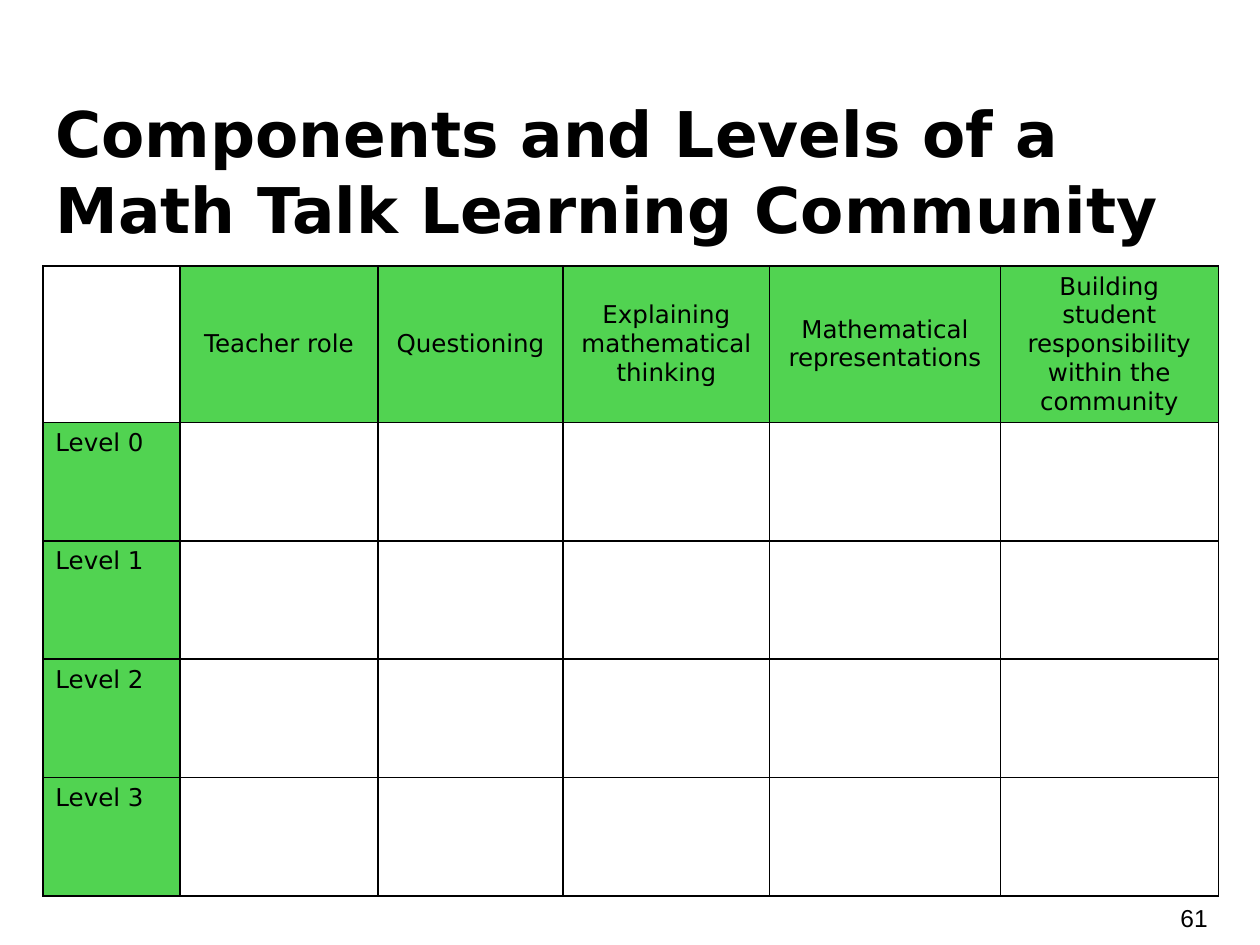
from dataclasses import dataclass

from lxml.etree import SubElement
from pptx import Presentation
from pptx.dml.color import RGBColor
from pptx.enum.text import MSO_ANCHOR, MSO_AUTO_SIZE, PP_ALIGN
from pptx.oxml.ns import qn
from pptx.util import Inches, Pt

GREEN = RGBColor(0x51, 0xD3, 0x51)
BLACK = RGBColor(0, 0, 0)
TITLE_FONT = "DejaVu Sans"
NUMBER_FONT = "Arial"
MARGIN = 0.1
LEFT, WIDTH = 0.34, 9.32
TABLE_TOP = 2.11
HEADER_HEIGHT, LEVEL_HEIGHT = 1.24, 0.94
LEVEL_COLUMN_WIDTH = 1.09
LEVELS = [f"Level {number}" for number in range(4)]


@dataclass
class Component:
    name: str
    width: float


COMPONENTS = [
    Component("Teacher role", 1.57),
    Component("Questioning", 1.47),
    Component("Explaining mathematical thinking", 1.64),
    Component("Mathematical representations", 1.83),
    Component("Building student responsibility within the community", 1.73),
]


def place(shape, left: float, top: float, width: float, height: float) -> None:
    shape.left, shape.top = Inches(left), Inches(top)
    shape.width, shape.height = Inches(width), Inches(height)


def write(frame, text: str, size: int, font: str, align=PP_ALIGN.LEFT, bold=False) -> None:
    frame.text = text
    paragraph = frame.paragraphs[0]
    paragraph.alignment = align
    paragraph.font.size = Pt(size)
    paragraph.font.name = font
    paragraph.font.bold = bold
    paragraph.font.color.rgb = BLACK


def set_frame(frame, anchor) -> None:
    frame.word_wrap = True
    frame.auto_size = MSO_AUTO_SIZE.NONE
    frame.vertical_anchor = anchor
    frame.margin_left = frame.margin_right = Inches(MARGIN)
    frame.margin_top = frame.margin_bottom = Inches(MARGIN)


def add_borders(cell) -> None:
    properties = cell._tc.get_or_add_tcPr()
    for side in ("a:lnL", "a:lnR", "a:lnT", "a:lnB"):
        line = SubElement(properties, qn(side), w=str(Pt(1)))
        fill = SubElement(line, qn("a:solidFill"))
        SubElement(fill, qn("a:srgbClr"), val=str(BLACK))


def fill_label(cell, text: str, align, anchor) -> None:
    write(cell.text_frame, text, 14, TITLE_FONT, align)
    cell.vertical_anchor = anchor
    cell.fill.solid()
    cell.fill.fore_color.rgb = GREEN


def add_level_table(page) -> None:
    widths = [LEVEL_COLUMN_WIDTH] + [component.width for component in COMPONENTS]
    heights = [HEADER_HEIGHT] + [LEVEL_HEIGHT] * len(LEVELS)
    table = page.shapes.add_table(
        len(heights), len(widths), Inches(LEFT), Inches(TABLE_TOP),
        Inches(sum(widths)), Inches(sum(heights))).table
    table.first_row = table.horz_banding = False
    for column, width in zip(table.columns, widths):
        column.width = Inches(width)
    for row, height in zip(table.rows, heights):
        row.height = Inches(height)
    for cell in table.iter_cells():
        add_borders(cell)
        cell.fill.background()
    for index, component in enumerate(COMPONENTS, 1):
        fill_label(table.cell(0, index), component.name, PP_ALIGN.CENTER, MSO_ANCHOR.MIDDLE)
    for index, level in enumerate(LEVELS, 1):
        fill_label(table.cell(index, 0), level, PP_ALIGN.LEFT, MSO_ANCHOR.TOP)


def main() -> None:
    deck = Presentation()
    deck.slide_width, deck.slide_height = Inches(10), Inches(7.5)
    page = deck.slides.add_slide(deck.slide_layouts[5])

    title = page.shapes.title
    place(title, LEFT, 0.65, WIDTH, 1.36)
    set_frame(title.text_frame, MSO_ANCHOR.TOP)
    write(title.text_frame, "Components and Levels of a Math Talk Learning Community",
          36, TITLE_FONT, bold=True)

    number = page.shapes.add_textbox(Inches(9.27), Inches(7), Inches(0.6), Inches(0.57))
    set_frame(number.text_frame, MSO_ANCHOR.MIDDLE)
    write(number.text_frame, "61", 14, NUMBER_FONT)

    add_level_table(page)
    deck.save("out.pptx")


if __name__ == "__main__":
    main()
